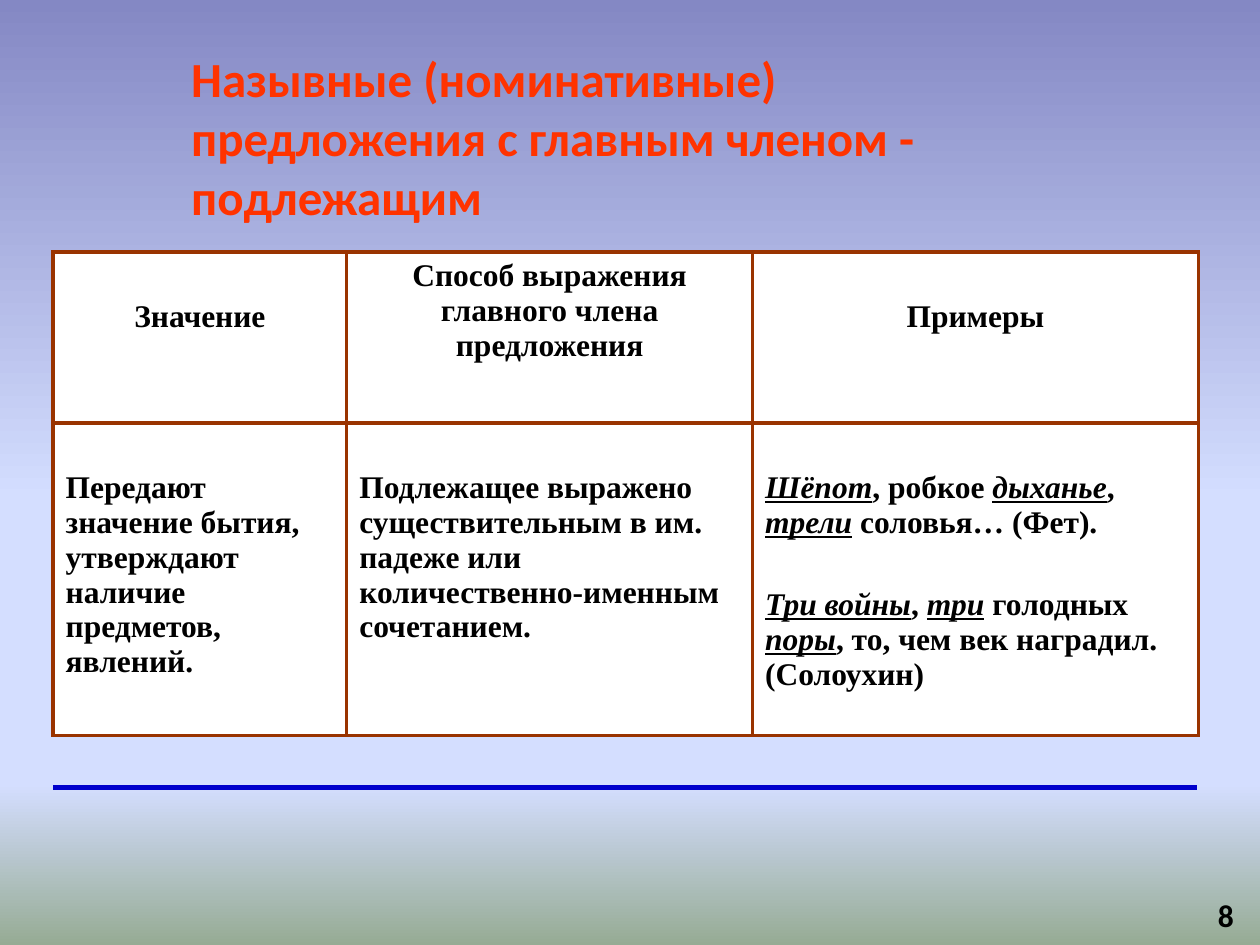
from dataclasses import dataclass

from lxml.etree import SubElement
from pptx import Presentation
from pptx.dml.color import RGBColor
from pptx.enum.shapes import MSO_CONNECTOR
from pptx.enum.text import MSO_ANCHOR as ANCHOR, MSO_AUTO_SIZE as AUTO_SIZE, PP_ALIGN as ALIGN
from pptx.oxml.ns import qn
from pptx.util import Cm, Pt

BLACK = RGBColor(0x00, 0x00, 0x00)
WHITE = RGBColor(0xFF, 0xFF, 0xFF)
ORANGE = RGBColor(0xFF, 0x33, 0x00)
BROWN = RGBColor(0x99, 0x33, 0x00)
BLUE = RGBColor(0x00, 0x00, 0xCC)
SKY = (
    (0, RGBColor(0x84, 0x88, 0xC4)),
    (53, RGBColor(0xD4, 0xDE, 0xFF)),
    (83, RGBColor(0xD4, 0xDE, 0xFF)),
    (100, RGBColor(0x96, 0xAB, 0x94)),
)

LEFT, RIGHT = 1.07, 24.13
COL_WIDTHS = (5.92, 8.18, 8.99)
ROW_HEIGHTS = (3.45, 6.3)
HIGH, LOW = 0.13, 0.95  # top margins of the cells


@dataclass(frozen=True)
class Run:
    text: str
    is_subject: bool = False


@dataclass(frozen=True)
class CellText:
    paragraphs: tuple[tuple[Run, ...], ...]
    align: ALIGN = ALIGN.LEFT
    top: float = LOW


def plain(text: str, align: ALIGN = ALIGN.LEFT, top: float = LOW) -> CellText:
    return CellText(((Run(text),),), align, top)


EXAMPLES = CellText((
    (Run("Шёпот", True), Run(", робкое "), Run("дыханье", True), Run(", "),
     Run("трели", True), Run(" соловья… (Фет).")),
    (Run("Три войны", True), Run(", "), Run("три", True), Run(" голодных "),
     Run("поры", True), Run(", то, чем век наградил. (Солоухин)")),
))
ROWS = (
    (plain("Значение", ALIGN.CENTER),
     plain("Способ выражения главного члена предложения", ALIGN.CENTER, HIGH),
     plain("Примеры", ALIGN.CENTER)),
    (plain("Передают значение бытия, утверждают наличие предметов, явлений."),
     plain("Подлежащее выражено существительным в им. падеже или "
           "количественно-именным сочетанием."),
     EXAMPLES),
)


def set_font(p, name: str, size: int, color: RGBColor) -> None:
    p.font.name, p.font.size, p.font.bold = name, Pt(size), True
    p.font.color.rgb = color


def set_background(s) -> None:
    fill = s.background.fill
    fill.gradient()
    fill.gradient_angle = 270
    stops = next(s.element.iter(qn("a:gsLst")))
    stops.clear()
    for percent, color in SKY:
        stop = SubElement(stops, qn("a:gs"), pos=str(percent * 1000))
        SubElement(stop, qn("a:srgbClr"), val=str(color))


def add_borders(cell) -> None:
    tc_pr = cell._tc.get_or_add_tcPr()
    for side in ("lnL", "lnR", "lnT", "lnB"):
        ln = SubElement(tc_pr, qn(f"a:{side}"), w=str(Pt(2.25)))
        fill = SubElement(ln, qn("a:solidFill"))
        SubElement(fill, qn("a:srgbClr"), val=str(BROWN))


def fill_cell(cell, content: CellText) -> None:
    add_borders(cell)
    cell.fill.solid()
    cell.fill.fore_color.rgb = WHITE
    cell.margin_top = Cm(content.top)
    tf = cell.text_frame
    for i, runs in enumerate(content.paragraphs):
        p = tf.add_paragraph() if i else tf.paragraphs[0]
        p.alignment = content.align
        p.space_before = Pt(27 if i else 0)
        set_font(p, "Times New Roman", 18, BLACK)
        for run in runs:
            r = p.add_run()
            r.text = run.text
            if run.is_subject:
                r.font.italic = r.font.underline = True


def add_sentence_table(s) -> None:
    frame = s.shapes.add_table(len(ROWS), len(COL_WIDTHS), Cm(LEFT), Cm(5.08),
                               Cm(sum(COL_WIDTHS)), Cm(sum(ROW_HEIGHTS)))
    table = frame.table
    table.first_row = table.horz_banding = False
    for column, width in zip(table.columns, COL_WIDTHS):
        column.width = Cm(width)
    for row, height, contents in zip(table.rows, ROW_HEIGHTS, ROWS):
        row.height = Cm(height)
        for cell, content in zip(row.cells, contents):
            fill_cell(cell, content)


def set_title(s) -> None:
    title = s.shapes.title
    title.left, title.top, title.width, title.height = Cm(3.6), Cm(0.85), Cm(18), Cm(3.8)
    tf = title.text_frame
    tf.text = "Назывные (номинативные) предложения с главным членом - подлежащим"
    tf.vertical_anchor = ANCHOR.TOP
    tf.auto_size = AUTO_SIZE.SHAPE_TO_FIT_TEXT
    p = tf.paragraphs[0]
    p.alignment = ALIGN.LEFT
    set_font(p, "Calibri", 28, ORANGE)


def add_rule(s) -> None:
    y = Cm(15.88)
    rule = s.shapes.add_connector(MSO_CONNECTOR.STRAIGHT, Cm(LEFT), y, Cm(RIGHT), y)
    rule.line.color.rgb = BLUE
    rule.line.width = Pt(3)
    SubElement(rule._element.spPr, qn("a:effectLst"))


def add_page_number(s) -> None:
    box = s.shapes.add_textbox(Cm(24.3), Cm(17.93), Cm(0.75), Cm(0.76))
    tf = box.text_frame
    tf.word_wrap = False
    tf.auto_size = AUTO_SIZE.SHAPE_TO_FIT_TEXT
    tf.text = "8"
    set_font(tf.paragraphs[0], "Calibri", 18, BLACK)


def main() -> None:
    prs = Presentation()
    prs.slide_width, prs.slide_height = Cm(25.4), Cm(19.05)
    s = prs.slides.add_slide(prs.slide_layouts[5])
    set_background(s)
    set_title(s)
    add_sentence_table(s)
    add_rule(s)
    add_page_number(s)
    prs.save("out.pptx")


if __name__ == "__main__":
    main()
